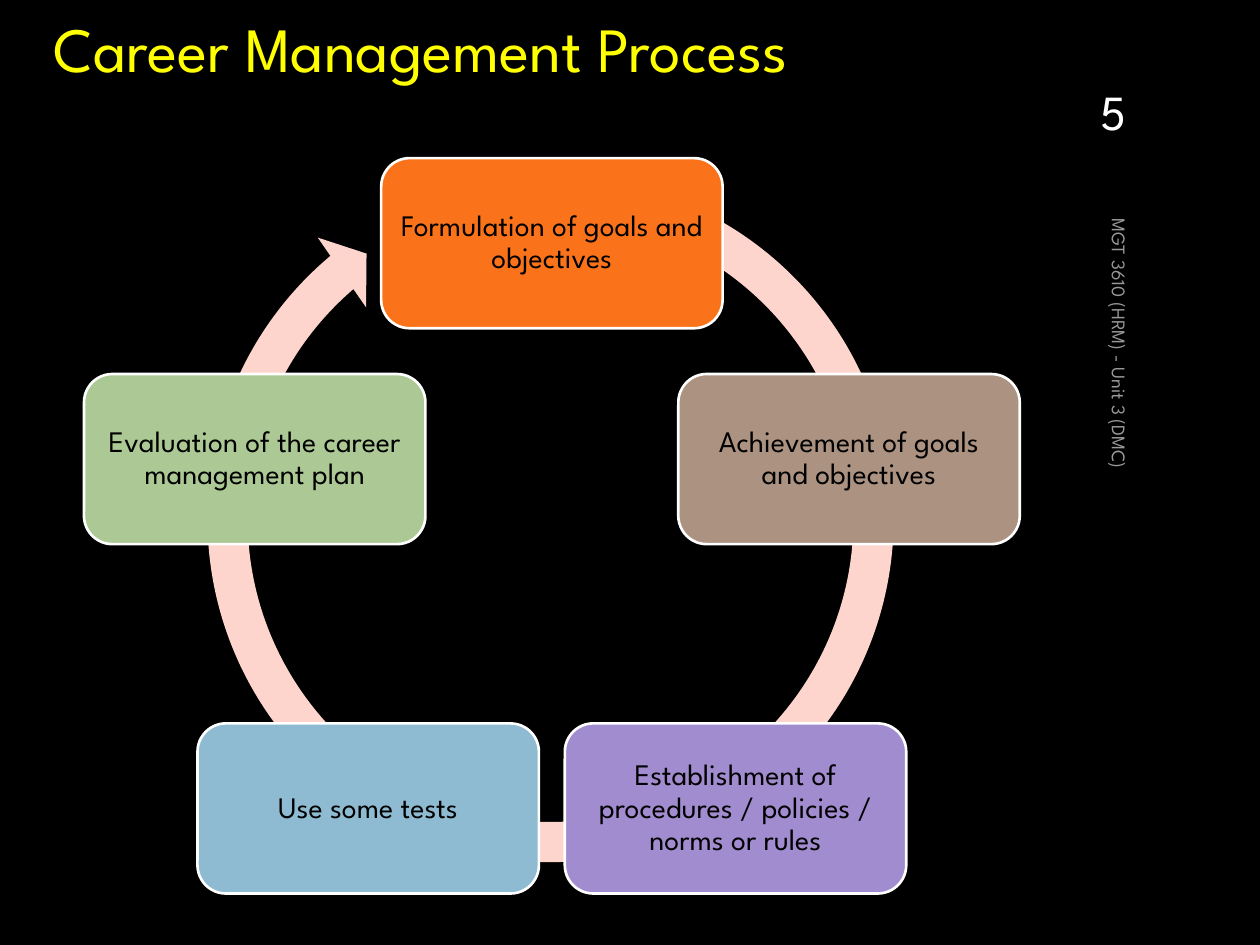
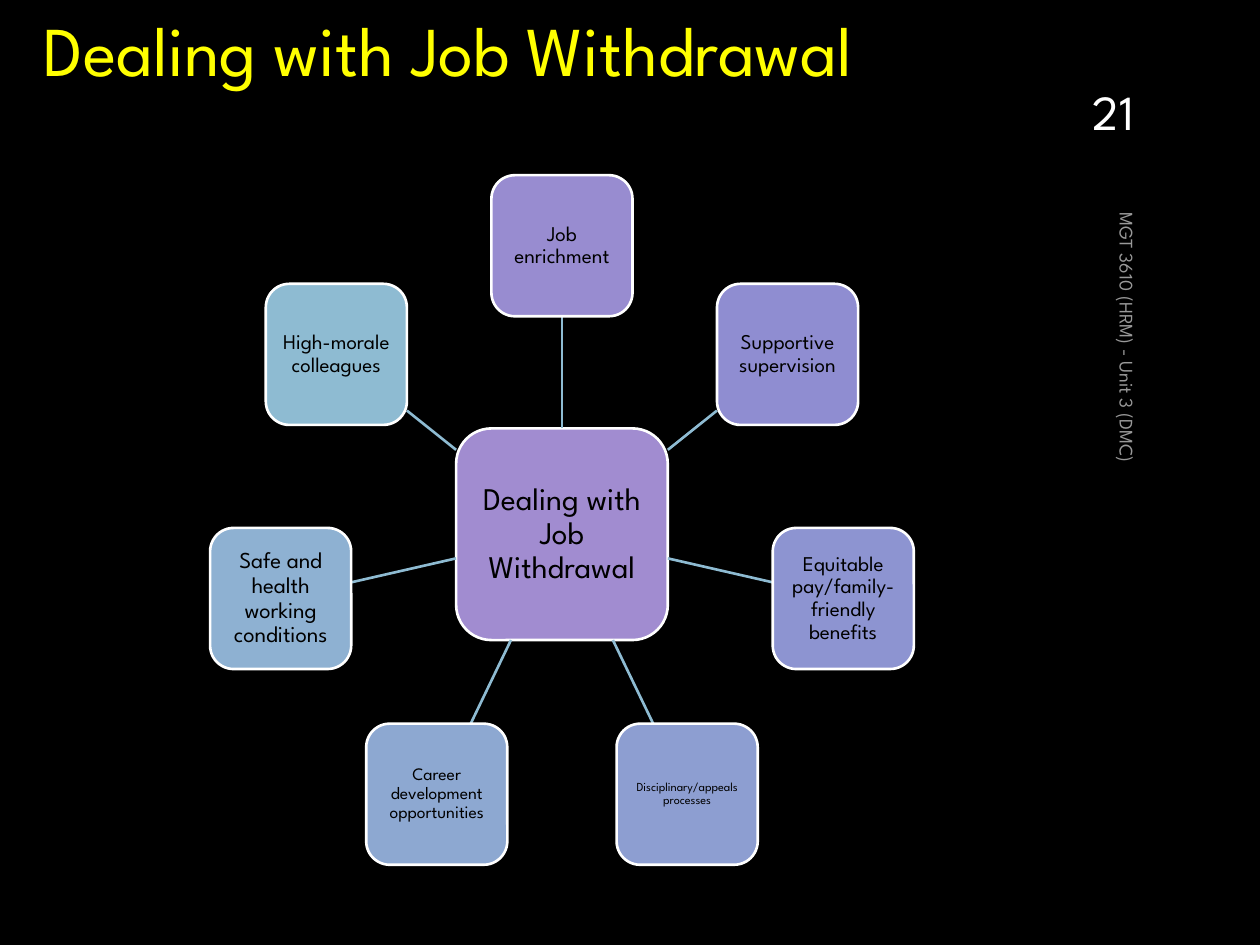
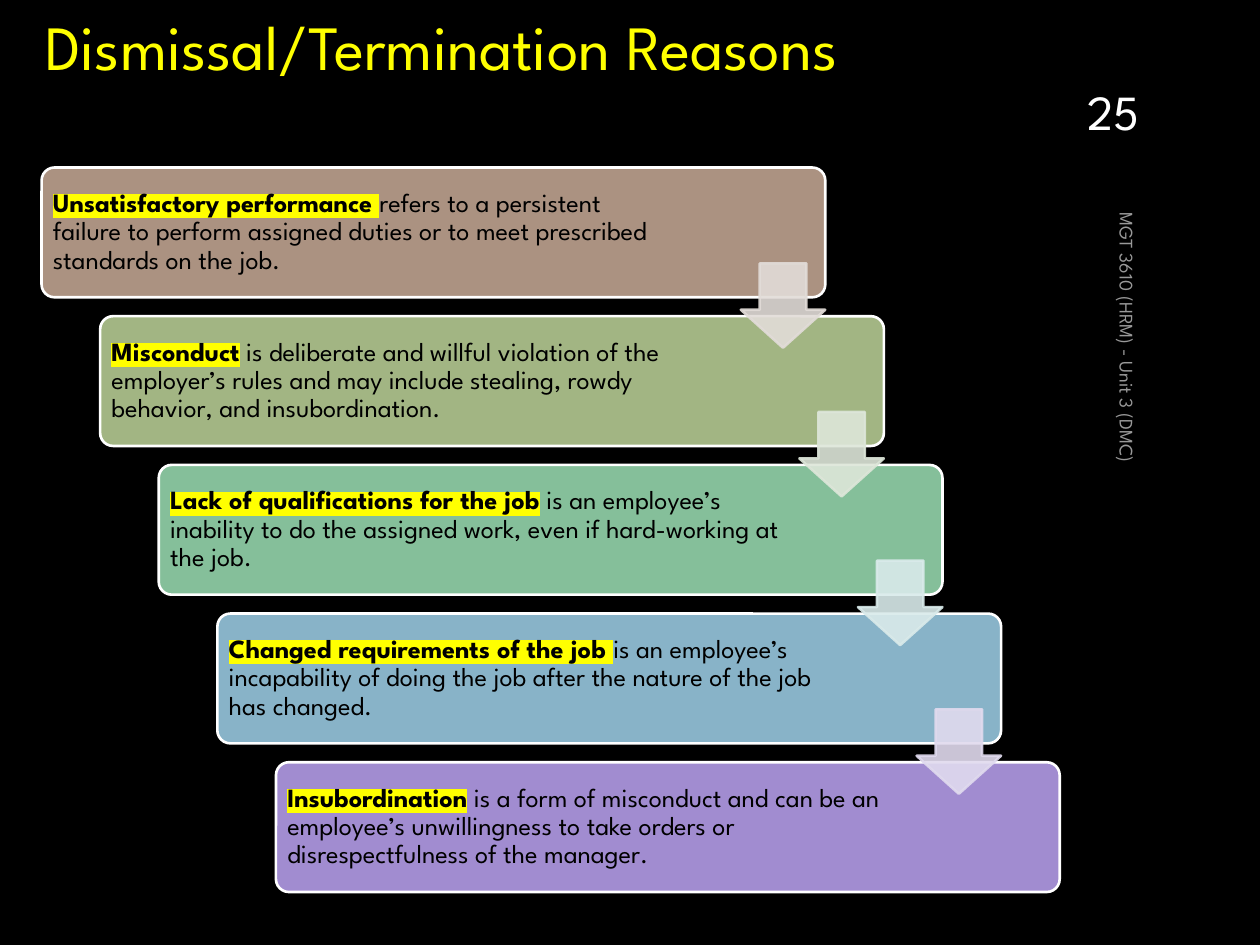
import math

import pptx
import pptx.dml.color
import pptx.enum.shapes
import pptx.enum.text
import pptx.oxml
import pptx.oxml.ns
import pptx.util
from pptx.util import Inches

FONT = "League Spartan"
BLACK, WHITE, YELLOW = "000000", "FFFFFF", "FFFF00"
FOOTER = "MGT 3610 (HRM) - Unit 3 (DMC)"
SHAPE = pptx.enum.shapes.MSO_SHAPE
ALIGN = pptx.enum.text.PP_ALIGN
ANCHOR = pptx.enum.text.MSO_ANCHOR

# text, fill; clockwise from the top
PROCESS_STEPS = [
    ("Formulation of goals and objectives", "FA731A"),
    ("Achievement of goals and objectives", "AB9281"),
    ("Establishment of procedures / policies / norms or rules", "A18CD0"),
    ("Use some tests", "8EBBD2"),
    ("Evaluation of the career management plan", "ACC995"),
]
CYCLE_COLOR = "FDD5CD"

# text, fill, font size; clockwise from the top
WITHDRAWAL_HUB = ("Dealing with Job Withdrawal", "A18CD0", 18)
WITHDRAWAL_REMEDIES = [
    ("Job enrichment", "988CD0", 12),
    ("Supportive supervision", "8F8DD1", 12),
    ("Equitable pay/family-friendly benefits", "8D94D1", 12),
    ("Disciplinary/appeals processes", "8D9ED1", 7),
    ("Career development opportunities", "8DA8D1", 10),
    ("Safe and health working conditions", "8EB1D2", 13),
    ("High-morale colleagues", "8EBBD2", 12),
]
SPOKE_COLOR = "8EBBD2"

# term, explanation, fill
DISMISSAL_REASONS = [
    ("Unsatisfactory performance ", "refers to a persistent failure to perform assigned duties "
     "or to meet prescribed standards on the job.", "AB9281"),
    ("Misconduct", " is deliberate and willful violation of the employer’s rules and may "
     "include stealing, rowdy behavior, and insubordination.", "A2B583"),
    ("Lack of qualifications for the job", " is an employee’s inability to do the assigned "
     "work, even if hard-working at the job.", "85BF9A"),
    ("Changed requirements of the job ", "is an employee’s incapability of doing the job "
     "after the nature of the job has changed.", "88B3C8"),
    ("Insubordination", " is a form of misconduct and can be an employee’s unwillingness to "
     "take orders or disrespectfulness of the manager.", "A18CD0"),
]
ARROW_COLORS = ["E2DCD8", "DDE6D9", "D9EAEA", "E0DAEE"]


def paint(fill, color, alpha=100):
    """Make a fill solid, with its opacity in percent."""
    fill.solid()
    fill.fore_color.rgb = pptx.dml.color.RGBColor.from_string(color)
    if alpha < 100:
        for srgb in fill._xPr.iter(pptx.oxml.ns.qn("a:srgbClr")):
            if srgb.get("val") == color:
                add_element(srgb, f'<a:alpha {pptx.oxml.ns.nsdecls("a")} val="{alpha * 1000}"/>')


def add_element(parent, xml):
    parent.append(pptx.oxml.parse_xml(xml))


def style_run(run, size, color, bold=False, alpha=100):
    run.font.size = pptx.util.Pt(size)
    run.font.bold = bold
    run.font.name = FONT
    paint(run.font.fill, color, alpha)


def highlight(run, color):
    solid_fill = run.font._element.find(pptx.oxml.ns.qn("a:solidFill"))
    solid_fill.addnext(pptx.oxml.parse_xml(
        f'<a:highlight {pptx.oxml.ns.nsdecls("a")}><a:srgbClr val="{color}"/></a:highlight>'))


def add_label(slide, text, box, size, color, anchor=ANCHOR.TOP, align=ALIGN.LEFT, alpha=100):
    label = slide.shapes.add_textbox(*map(Inches, box))
    frame = label.text_frame
    frame.text = text
    frame.word_wrap = True
    frame.vertical_anchor = anchor
    frame.paragraphs[0].alignment = align
    style_run(frame.paragraphs[0].runs[0], size, color, alpha=alpha)
    return label


def add_figure(slide, preset, box, fill, outline=None, alpha=100):
    figure = slide.shapes.add_shape(preset, *map(Inches, box))
    figure.shadow.inherit = False
    paint(figure.fill, fill, alpha)
    if outline:
        paint(figure.line.fill, outline, alpha)
        figure.line.width = pptx.util.Pt(1.5)
    else:
        figure.line.fill.background()
    return figure


def add_card(slide, box, fill, inset, align=ALIGN.CENTER):
    """Add a white-edged rounded box ready for text."""
    card = add_figure(slide, SHAPE.ROUNDED_RECTANGLE, box, fill, WHITE)
    frame = card.text_frame
    frame.word_wrap = True
    frame.vertical_anchor = ANCHOR.MIDDLE
    frame.margin_left = frame.margin_right = Inches(inset)
    frame.margin_top = frame.margin_bottom = Inches(inset)
    frame.paragraphs[0].alignment = align
    frame.paragraphs[0].line_spacing = 0.9
    return card


def add_node(slide, center, width, height, text, fill, size, inset):
    x, y = center
    card = add_card(slide, (x - width / 2, y - height / 2, width, height), fill, inset)
    paragraph = card.text_frame.paragraphs[0]
    paragraph.text = text
    style_run(paragraph.runs[0], size, BLACK)


def directions(count):
    """Unit vectors clockwise from the top."""
    angles = [2 * math.pi * i / count for i in range(count)]
    return [(math.sin(angle), -math.cos(angle)) for angle in angles]


def start_slide(deck, title, title_box, title_size, number, footer_at):
    slide = deck.slides.add_slide(deck.slide_layouts[6])
    paint(slide.background.fill, BLACK)
    add_label(slide, title, title_box, title_size, YELLOW)
    footer = add_label(slide, FOOTER, (*footer_at, 4.22, 0.25), 11, WHITE,
                       ANCHOR.BOTTOM, alpha=60)
    footer.rotation = 90
    add_label(slide, str(number), (8.49, 0.32, 0.69, 0.84), 28, WHITE,
              ANCHOR.BOTTOM, ALIGN.CENTER)
    return slide


def build_process(deck):
    slide = start_slide(deck, "Career Management Process", (0.33, 0.03, 8.08, 1.13), 36,
                        5, (6.76, 3.62))
    cycle = add_figure(slide, SHAPE.CIRCULAR_ARROW, (1.47, 1.22, 5.8, 5.8), CYCLE_COLOR)
    for i, value in enumerate((0.055, 3.307, 137.859, 173.799, 0.058)):
        cycle.adjustments[i] = value
    center_x, center_y, radius = 4.38, 4.41, 2.48
    for (dx, dy), (text, fill) in zip(directions(len(PROCESS_STEPS)), PROCESS_STEPS):
        center = center_x + radius * dx, center_y + radius * dy
        add_node(slide, center, 2.71, 1.35, text, fill, 17, 0.07)


def build_withdrawal(deck):
    slide = start_slide(deck, "Dealing with Job Withdrawal", (0.25, 0, 8.17, 1.33), 40,
                        21, (6.82, 3.57))
    hub_x, hub_y, radius = 4.46, 4.24, 2.29
    hub_side, remedy_side = 1.68, 1.12
    add_node(slide, (hub_x, hub_y), hub_side, hub_side, *WITHDRAWAL_HUB, 0.05)
    for (dx, dy), remedy in zip(directions(len(WITHDRAWAL_REMEDIES)), WITHDRAWAL_REMEDIES):
        # distance from a square's centre to its edge, per unit of side
        reach = 0.5 / max(abs(dx), abs(dy))
        start, end = hub_side * reach, radius - remedy_side * reach
        spoke = slide.shapes.add_connector(
            pptx.enum.shapes.MSO_CONNECTOR.STRAIGHT,
            Inches(hub_x + start * dx), Inches(hub_y + start * dy),
            Inches(hub_x + end * dx), Inches(hub_y + end * dy))
        paint(spoke.line.fill, SPOKE_COLOR)
        spoke.line.width = pptx.util.Pt(1.5)
        add_element(spoke._element.spPr, f'<a:effectLst {pptx.oxml.ns.nsdecls("a")}/>')
        add_node(slide, (hub_x + radius * dx, hub_y + radius * dy),
                 remedy_side, remedy_side, *remedy, 0.03)


def build_dismissal(deck):
    slide = start_slide(deck, "Dismissal/Termination Reasons", (0.26, 0.01, 8.16, 1.15), 36,
                        25, (6.82, 3.57))
    width, height, arrow_side = 6.22, 1.03, 0.67
    corners = [(0.33 + 0.465 * i, 1.33 + 1.18 * i) for i in range(len(DISMISSAL_REASONS))]
    for corner, (term, explanation, fill) in zip(corners, DISMISSAL_REASONS):
        card = add_card(slide, (*corner, width, height), fill, 0.06, ALIGN.LEFT)
        card.adjustments[0] = 0.1
        card.text_frame.margin_right = Inches(1.21)
        paragraph = card.text_frame.paragraphs[0]
        for text, is_term in ((term, True), (explanation, False)):
            run = paragraph.add_run()
            run.text = text
            style_run(run, 15, BLACK, is_term)
            if is_term:
                highlight(run, YELLOW)
    for (x, y), color in zip(corners, ARROW_COLORS):
        arrow = add_figure(slide, SHAPE.DOWN_ARROW,
                           (x + width - arrow_side, y + 0.76, arrow_side, arrow_side),
                           color, color, 90)
        arrow.adjustments[0] = 0.55
        arrow.adjustments[1] = 0.45


def main():
    deck = pptx.Presentation()
    deck.slide_width, deck.slide_height = Inches(10), Inches(7.5)
    build_process(deck)
    build_withdrawal(deck)
    build_dismissal(deck)
    deck.save("out.pptx")


if __name__ == "__main__":
    main()
